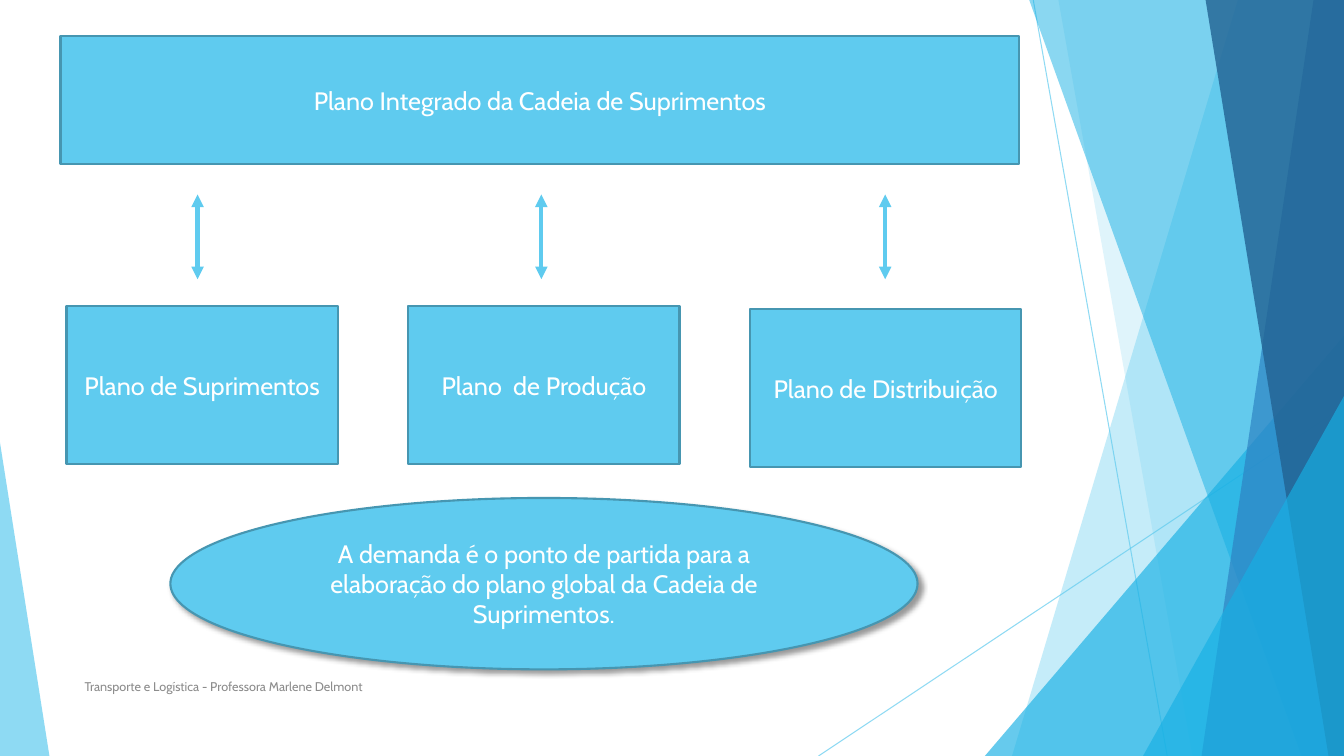
from dataclasses import dataclass

from lxml import etree
from pptx import Presentation
from pptx import util as u
from pptx.dml.color import RGBColor
from pptx.enum import shapes, text
from pptx.oxml.ns import qn


@dataclass(frozen=True)
class Theme:
    sky: str = "5FCBEF"
    cyan: str = "17B0E4"
    blue: str = "2E83C3"
    navy: str = "226292"
    edge: str = "4696B1"
    white: str = "FFFFFF"
    grey: str = "8C8C8C"
    font: str = "Cabin"
    body: int = 18
    small: int = 9


T = Theme()
WIDTH, HEIGHT = u.Inches(13.33), u.Inches(7.5)
SHAPE = shapes.MSO_SHAPE


# Lengths are percentages of the slide's width and height
def px(share):
    return round(WIDTH * share / 100)


def py(share):
    return round(HEIGHT * share / 100)


def place(x, y, w, h):
    return px(x), py(y), px(w), py(h)


def set_alpha(el, percent):
    clr = next(el.iter(qn("a:srgbClr")))
    etree.SubElement(clr, qn("a:alpha"), val=str(percent * 1000))


def paint(sp, color):
    sp.shadow.inherit = False
    sp.fill.solid()
    sp.fill.fore_color.rgb = RGBColor.from_string(color)


def write(sp, words, size, color, align):
    tf = sp.text_frame
    tf.word_wrap = True
    tf.vertical_anchor = text.MSO_ANCHOR.MIDDLE
    p = tf.paragraphs[0]
    p.alignment = align
    r = p.add_run()
    r.text = words
    r.font.name, r.font.size = T.font, u.Pt(size)
    r.font.color.rgb = RGBColor.from_string(color)


def add_line(s, start, end, width):
    cn = s.shapes.add_connector(shapes.MSO_CONNECTOR.STRAIGHT,
                                px(start[0]), py(start[1]), px(end[0]), py(end[1]))
    cn.line.color.rgb = RGBColor.from_string(T.sky)
    cn.line.width = u.Pt(width)
    etree.SubElement(cn.element.spPr, qn("a:effectLst"))
    return cn


def add_thin_line(s, start, end):
    cn = add_line(s, start, end, 0.75)
    set_alpha(cn.element.spPr, 70)


def add_double_arrow(s, x, top, bottom):
    cn = add_line(s, (x, top), (x, bottom), 3)
    ln = cn.line._get_or_add_ln()
    for tag in ("a:headEnd", "a:tailEnd"):
        etree.SubElement(ln, qn(tag), type="triangle")


def finish_facet(sp, color, alpha):
    paint(sp, color)
    set_alpha(sp.element.spPr, alpha)
    sp.line.fill.background()


def add_facet(s, top, bottom, color, alpha):
    """Band from a slanted left edge to the right side of the slide."""
    fb = s.shapes.build_freeform(px(top), 0)
    fb.add_line_segments([(WIDTH, 0), (WIDTH, HEIGHT), (px(bottom), HEIGHT)])
    finish_facet(fb.convert_to_shape(), color, alpha)


def add_corner(s, x, y, w, apex, color, alpha):
    """Right triangle that stands on the bottom of the slide."""
    sp = s.shapes.add_shape(SHAPE.ISOSCELES_TRIANGLE, *place(x, y, w, 100 - y))
    sp.adjustments[0] = apex
    finish_facet(sp, color, alpha)


def add_block(s, kind, box, words):
    sp = s.shapes.add_shape(kind, *place(*box))
    paint(sp, T.sky)
    sp.line.color.rgb = RGBColor.from_string(T.edge)
    sp.line.width = u.Pt(1.5)
    write(sp, words, T.body, T.white, text.PP_ALIGN.CENTER)
    return sp


def add_drop_shadow(sp):
    effects = sp.element.spPr.find(qn("a:effectLst"))
    shadow = etree.SubElement(effects, qn("a:outerShdw"), blurRad=str(u.Pt(4)),
                              dist=str(u.Pt(3)), dir=str(45 * 60000),
                              algn="tl", rotWithShape="0")
    etree.SubElement(shadow, qn("a:srgbClr"), val="000000")
    set_alpha(shadow, 40)


def add_backdrop(s):
    add_thin_line(s, (76.88, 0), (86.85, 100))
    add_thin_line(s, (100, 53.73), (60.9, 100))
    add_facet(s, 92.1, 75.3, T.sky, 36)
    add_facet(s, 78.75, 88.73, T.sky, 20)
    add_corner(s, 73.28, 44.4, 26.72, 1, T.cyan, 66)
    add_facet(s, 76.58, 96.83, T.cyan, 50)
    add_facet(s, 97.73, 89.4, T.blue, 70)
    add_facet(s, 89.7, 98.85, T.navy, 80)
    add_corner(s, 85.05, 52.4, 14.95, 1, T.cyan, 66)
    add_corner(s, 0, 58.53, 3.68, 0, T.sky, 70)


def main():
    prs = Presentation()
    prs.slide_width, prs.slide_height = WIDTH, HEIGHT
    s = prs.slides.add_slide(prs.slide_layouts[6])
    add_backdrop(s)

    # Integrated plan
    add_block(s, SHAPE.FLOWCHART_PROCESS, (4.5, 4.8, 71.34, 16.93),
              "Plano Integrado da Cadeia de Suprimentos")

    # Partial plans, each with its arrow
    plans = [("Plano de Suprimentos", 40.53),
             ("Plano  de Produção", 40.53),
             ("Plano de Distribuição", 40.93)]
    for i, (words, top) in enumerate(plans):
        add_block(s, SHAPE.RECTANGLE, (4.95 + 25.43 * i, top, 20.18, 20.8), words)
        add_double_arrow(s, 14.7 + 25.58 * i, 25.73, 36.93)

    # Demand as the starting point
    demand = add_block(s, SHAPE.OVAL, (12.68, 65.87, 55.59, 22.67),
                       "A demanda é o ponto de partida para a elaboração "
                       "do plano global da Cadeia de Suprimentos.")
    add_drop_shadow(demand)

    # Footer
    footer = s.shapes.add_textbox(*place(5.55, 88.13, 51.69, 5.33))
    write(footer, "Transporte e Logística - Professora Marlene Delmont",
          T.small, T.grey, text.PP_ALIGN.LEFT)

    prs.save("out.pptx")


if __name__ == "__main__":
    main()
